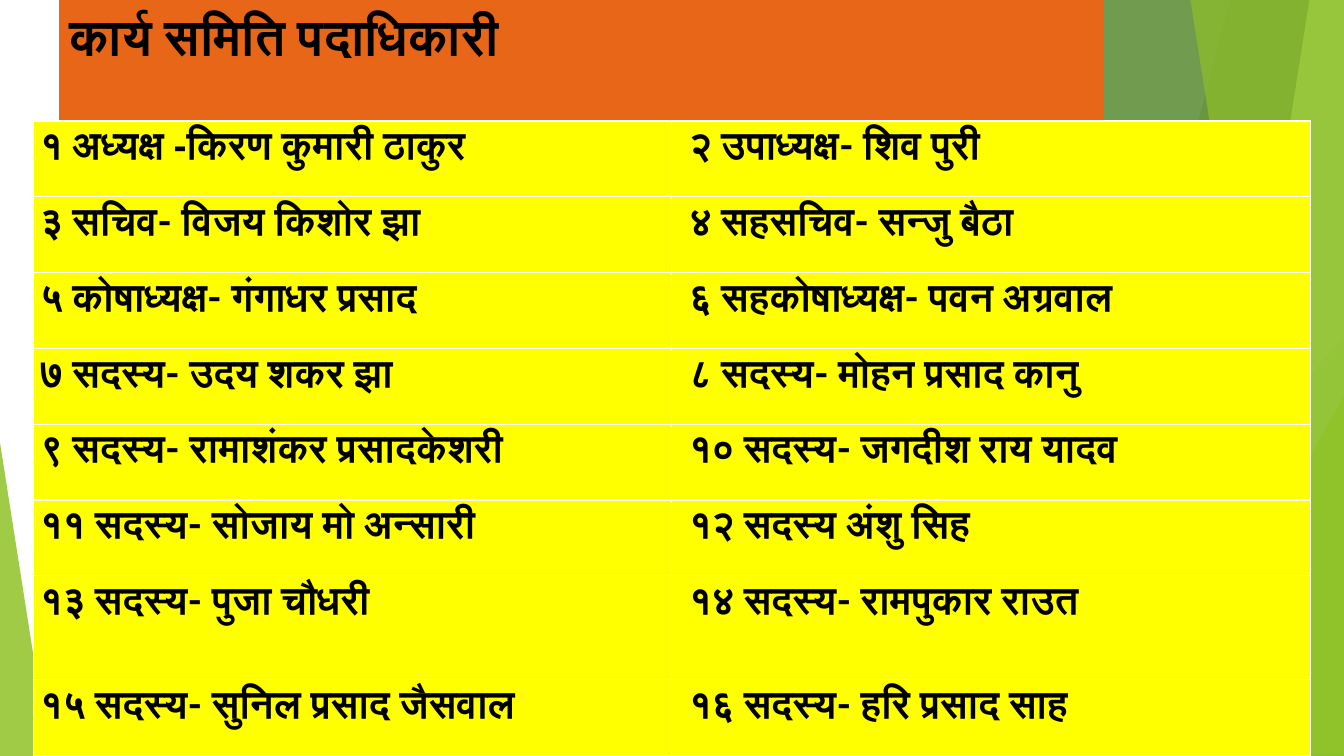
import lxml.etree
import pptx
import pptx.dml.color
import pptx.enum.shapes
import pptx.enum.text
import pptx.oxml.ns
import pptx.util

Cm = pptx.util.Cm
qn = pptx.oxml.ns.qn
WIDE, HIGH = 33.87, 19.05
LIME = "90C226"
TITLE = "कार्य समिति पदाधिकारी"
PEOPLE = [
    ("१ अध्यक्ष |-|किरण कुमारी ठाकुर", "२ उपाध्यक्ष- शिव पुरी"),
    ("३ सचिव- विजय किशोर झा", "४ सहसचिव- सन्जु बैठा"),
    ("५ कोषाध्यक्ष- गंगाधर प्रसाद", "६ सहकोषाध्यक्ष- पवन अग्रवाल"),
    ("७ सदस्य- उदय शकर झा", "८ सदस्य- मोहन प्रसाद कानु"),
    ("९ सदस्य- रामाशंकर प्रसादकेशरी", "१० सदस्य- जगदीश राय यादव"),
    ("११ सदस्य- सोजाय मो अन्सारी", "१२ सदस्य अंशु सिह"),
    ("१३ सदस्य- पुजा चौधरी", "१४ सदस्य- रामपुकार राउत"),
    ("१५ सदस्य- सुनिल प्रसाद जैसवाल", "१६ सदस्य- हरि प्रसाद साह"),
]


def paint(color, code):
    """Set a colour from a hex string."""
    color.rgb = pptx.dml.color.RGBColor.from_string(code)


def fill(part, code):
    """Give a shape or cell a solid fill."""
    part.fill.solid()
    paint(part.fill.fore_color, code)


def style(run, size, face="Lato"):
    """Format a run as bold black text."""
    font = run.font
    font.size, font.bold, font.name = pptx.util.Pt(size), True, face
    paint(font.color, "000000")
    script = lxml.etree.SubElement(font._element, qn("a:cs"))
    script.set("typeface", face)


def tint(shape, code, alpha):
    """Fill a shape with a see-through colour and drop its line and shadow."""
    fill(shape, code)
    shape.line.fill.background()
    shape.shadow.inherit = False
    color = shape.element.spPr.find(".//" + qn("a:srgbClr"))
    lxml.etree.SubElement(color, qn("a:alpha")).set("val", str(alpha * 1000))


def ray(slide, start, end, code):
    """Draw a thin line between two points."""
    kind = pptx.enum.shapes.MSO_CONNECTOR.STRAIGHT
    line = slide.shapes.add_connector(kind, *map(Cm, start + end))
    line.line.width = pptx.util.Pt(0.75)
    paint(line.line.color, code)
    lxml.etree.SubElement(line.element.spPr, qn("a:effectLst"))


def wedge(slide, box, top, foot, code, alpha):
    """Draw a band from a slanted left side to the right edge of the box."""
    x, y, w, h = box
    pen = slide.shapes.build_freeform(x + top, y, Cm(1))
    pen.add_line_segments([(x + w, y), (x + w, y + h), (x + foot, y + h)])
    tint(pen.convert_to_shape(), code, alpha)


def spike(slide, box, tip, code, alpha):
    """Draw a right triangle with its tip at the given share of the width."""
    kind = pptx.enum.shapes.MSO_SHAPE.ISOSCELES_TRIANGLE
    shape = slide.shapes.add_shape(kind, *map(Cm, box))
    shape.adjustments[0] = tip
    tint(shape, code, alpha)


def facets(slide, box):
    """Draw the green facets along both sides of the box."""
    x, y, w, h = box
    right, base = x + w, y + h
    ray(slide, (right - 7.83, y), (right - 4.45, base), "BFBFBF")
    ray(slide, (right, y + 10.24), (right - 13.24, base), "D9D9D9")
    wedge(slide, box, w - 2.67, w - 8.36, LIME, 30)
    wedge(slide, box, w - 7.19, w - 3.81, LIME, 20)
    spike(slide, (right - 9.05, base - 10.58, 9.05, 10.58), 1, "54A021", 72)
    wedge(slide, box, w - 7.93, w - 1.07, "3F7819", 70)
    wedge(slide, box, w - 0.76, w - 3.58, "C0E474", 70)
    wedge(slide, box, w - 3.48, w - 0.38, LIME, 65)
    spike(slide, (right - 5.06, base - 9.07, 5.06, 9.07), 1, LIME, 80)
    spike(slide, (x, base - 7.9, 1.24, 7.9), 0, LIME, 85)


def banner(slide, box):
    """Place the title in its orange band, above the facets."""
    title = slide.shapes.title
    slide.shapes._spTree.append(title.element)
    title.left, title.top, title.width, title.height = map(Cm, box)
    fill(title, "E76618")
    frame = title.text_frame
    frame.text = TITLE
    frame.vertical_anchor = pptx.enum.text.MSO_ANCHOR.TOP
    para = frame.paragraphs[0]
    para.alignment = pptx.enum.text.PP_ALIGN.LEFT
    style(para.runs[0], 36)


def entry(cell, text, inset):
    """Write one member, with a dash between bars in its own font."""
    fill(cell, "FFFF00")
    cell.margin_left, cell.margin_right = Cm(inset), Cm(0.18)
    cell.margin_top = cell.margin_bottom = 0
    para = cell.text_frame.paragraphs[0]
    para.alignment = pptx.enum.text.PP_ALIGN.JUSTIFY
    for part in text.split("|"):
        run = para.add_run()
        run.text = part
        style(run, 28, "Arial" if part == "-" else "Lato")


def roster(slide, box):
    """Place the table of members."""
    rows = len(PEOPLE)
    table = slide.shapes.add_table(rows, 2, *map(Cm, box)).table
    for col in table.columns:
        col.width = Cm(box[2] / 2)
    for i, pair in enumerate(PEOPLE):
        table.rows[i].height = Cm(2.62 if i == rows - 2 else 1.91)
        for j, text in enumerate(pair):
            entry(table.cell(i, j), text, (0.18, 0.44)[j])


def main():
    """Build and save the slide."""
    deck = pptx.Presentation()
    deck.slide_width, deck.slide_height = Cm(WIDE), Cm(HIGH)
    slide = deck.slides.add_slide(deck.slide_layouts[5])
    facets(slide, (0, 0, WIDE, HIGH))
    banner(slide, (1.49, 0, 26.32, 3.05))
    roster(slide, (0.84, 3.05, 32.18, 16))
    deck.save("out.pptx")


if __name__ == "__main__":
    main()
